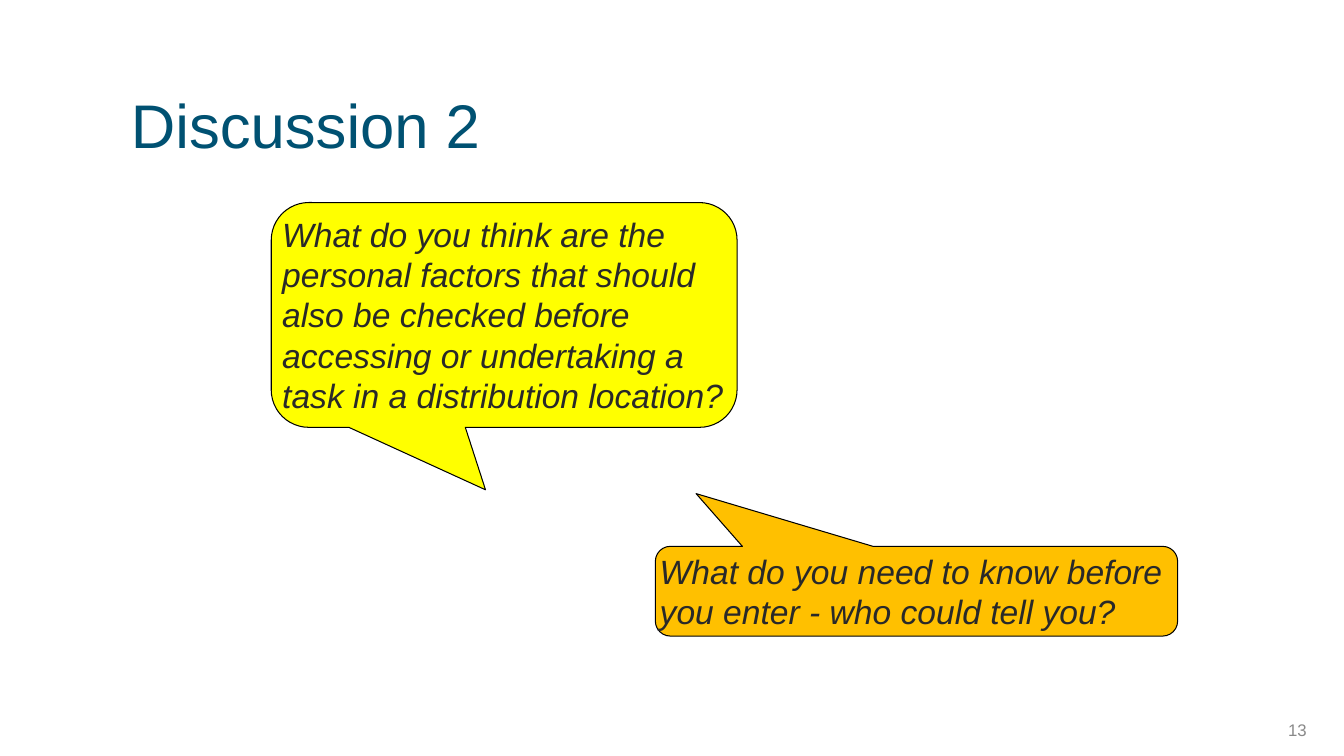
from pptx import Presentation
from pptx.dml.color import RGBColor
from pptx.enum import shapes, text
from pptx.util import Inches, Pt

# Content: words, place, format
LABELS = [
    ("13", (12.13, 7.14, 0.93, 0.2), dict(size=12, color="898989"),
     dict(align="RIGHT", anchor="MIDDLE", spacing=1.0)),
    ("Discussion 2", (1.2, 0.9, 10.6, 0.47), dict(size=44, color="005172"),
     dict(align="LEFT", anchor="TOP", spacing=0.9)),
]
# Bubbles: words, place, fill, tail tip and corner
BUBBLES = [
    ("What do you think are the personal factors that should also be checked "
     "before accessing or undertaking a task in a distribution location?",
     (2.69, 2.01, 4.62, 2.23), "FFFF00", (-0.04, 0.778, 0.167)),
    ("What do you need to know before you enter - who could tell you?",
     (6.5, 5.42, 5.18, 0.89), "FFC000", (-0.422, -1.088, 0.167)),
]
SPEECH = dict(size=24, color="292929", italic=True)
PLAIN = dict(align="LEFT", anchor="TOP", spacing=1.0)


def paint(color, code):
    color.rgb = RGBColor.from_string(code)


def write(frame, words, font, lay):
    frame.word_wrap = True
    frame.vertical_anchor = getattr(text.MSO_ANCHOR, lay["anchor"])
    para = frame.paragraphs[0]
    para.alignment = getattr(text.PP_ALIGN, lay["align"])
    para.line_spacing = lay["spacing"]
    run = para.add_run()
    run.text = words
    look = {**font, "name": "Arial", "size": Pt(font["size"])}
    paint(run.font.color, look.pop("color"))
    for key, value in look.items():
        setattr(run.font, key, value)


deck = Presentation()
deck.slide_width, deck.slide_height = Inches(13.33), Inches(7.5)
slide = deck.slides.add_slide(deck.slide_layouts[6])

# Title and page number
for words, place, font, lay in LABELS:
    box = slide.shapes.add_textbox(*map(Inches, place))
    write(box.text_frame, words, font, lay)

# Speech bubbles
for words, place, fill, bends in BUBBLES:
    bubble = slide.shapes.add_shape(
        shapes.MSO_SHAPE.ROUNDED_RECTANGULAR_CALLOUT, *map(Inches, place))
    for i, bend in enumerate(bends):
        bubble.adjustments[i] = bend
    bubble.shadow.inherit = False
    bubble.fill.solid()
    paint(bubble.fill.fore_color, fill)
    paint(bubble.line.color, "000000")
    bubble.line.width = Pt(0.75)
    frame = bubble.text_frame
    for side in ("left", "top", "right", "bottom"):
        setattr(frame, f"margin_{side}", 0)
    frame.auto_size = text.MSO_AUTO_SIZE.SHAPE_TO_FIT_TEXT
    write(frame, words, SPEECH, PLAIN)

deck.save("out.pptx")
